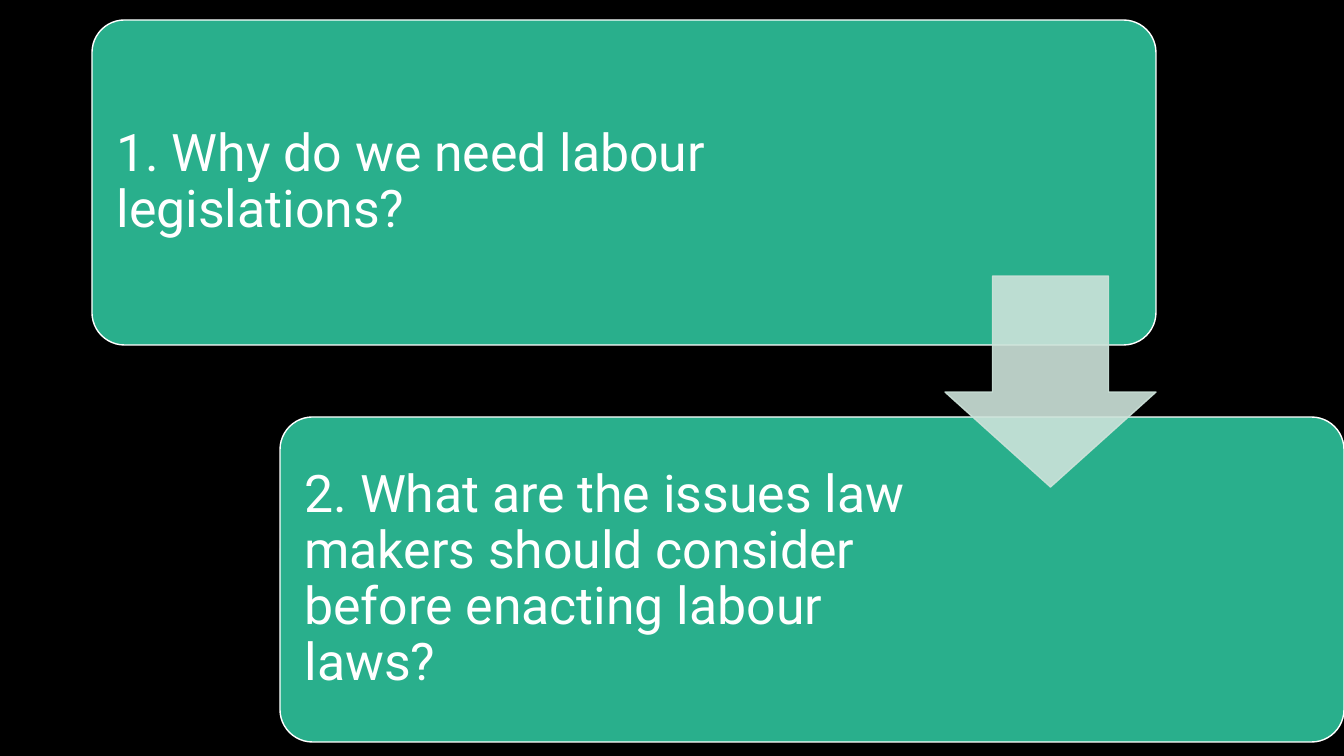
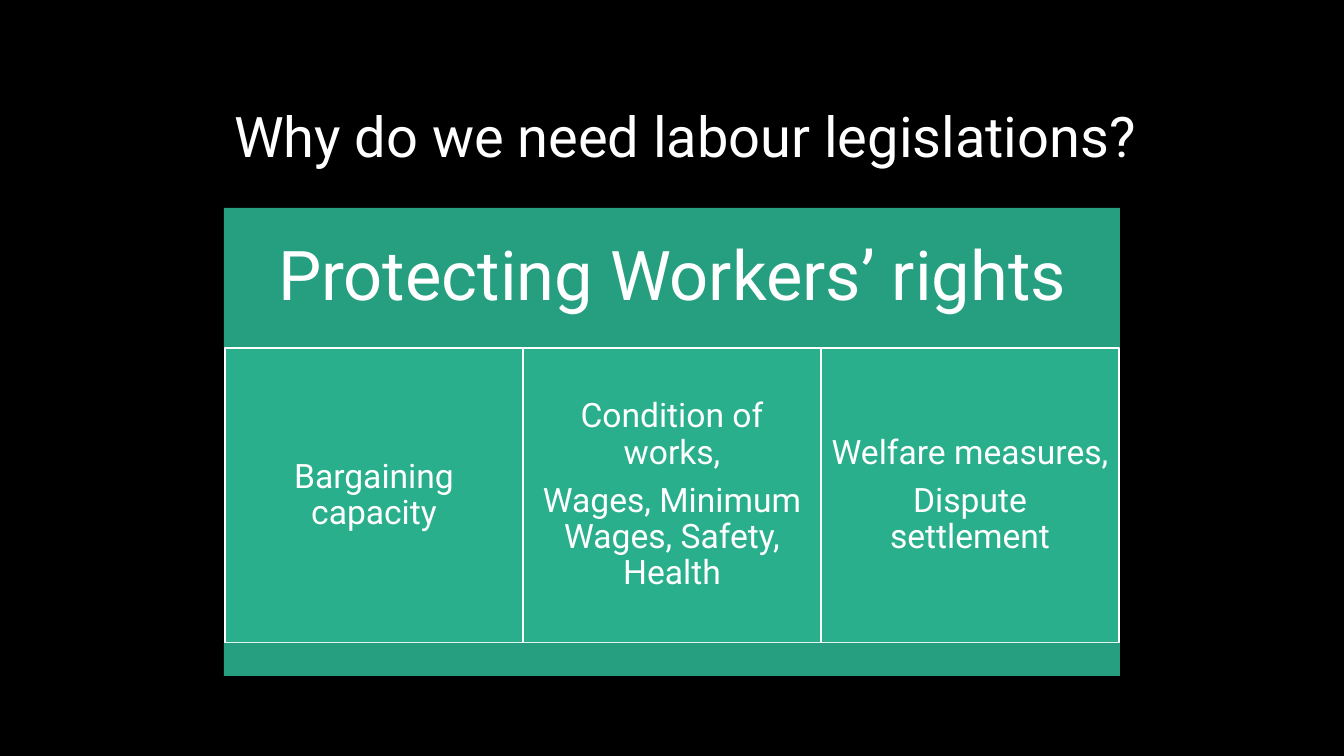
from lxml.etree import SubElement
from pptx import Presentation
from pptx.dml.color import RGBColor
from pptx.enum.shapes import MSO_SHAPE
from pptx.enum.text import MSO_ANCHOR, MSO_AUTO_SIZE, PP_ALIGN
from pptx.oxml.ns import qn
from pptx.util import Pt

PX = 914400 / 100.8
BLACK, WHITE = "000000", "FFFFFF"
GREEN, DARK_GREEN, PALE_GREEN = "29AF8C", "259F7F", "CDE3DA"


def add_block(page, kind, bounds, fill, line=None):
    shape = page.shapes.add_shape(kind, *[round(value * PX) for value in bounds])
    shape.shadow.inherit = False
    shape.fill.solid()
    shape.fill.fore_color.rgb = RGBColor.from_string(fill)
    if line:
        shape.line.color.rgb = RGBColor.from_string(line)
        shape.line.width = Pt(1)
    else:
        shape.line.fill.background()
    return shape


def write(shape, lines, size, margins, align=PP_ALIGN.CENTER):
    """Fill a shape with paragraphs; margins are left, top, right, bottom in px."""
    frame = shape.text_frame
    frame.word_wrap = True
    frame.auto_size = MSO_AUTO_SIZE.NONE
    frame.vertical_anchor = MSO_ANCHOR.MIDDLE
    (frame.margin_left, frame.margin_top,
     frame.margin_right, frame.margin_bottom) = [round(value * PX) for value in margins]
    frame.text = "\n".join(lines)
    for para in frame.paragraphs:
        para.alignment = align
        para.line_spacing = 0.9
        para.space_before = Pt(0)
        para.space_after = Pt(size * 0.35)
        para.font.name = "Roboto"
        para.font.size = Pt(size)
        para.font.color.rgb = RGBColor.from_string(WHITE)


deck = Presentation()
deck.slide_width, deck.slide_height = round(1344 * PX), round(756 * PX)
background = deck.slide_master.background.fill
background.solid()
background.fore_color.rgb = RGBColor.from_string(BLACK)
title_only, blank = deck.slide_layouts[5], deck.slide_layouts[6]

# Slide 1: two questions joined by an arrow
page = deck.slides.add_slide(blank)
questions = [
    (92, 20, 332, "1. Why do we need labour legislations?"),
    (280, 417, 414, "2. What are the issues law makers should consider "
                    "before enacting labour laws?"),
]
for left, top, right_margin, question in questions:
    card = add_block(page, MSO_SHAPE.ROUNDED_RECTANGLE, (left, top, 1064, 325), GREEN, WHITE)
    card.adjustments[0] = 0.1
    write(card, [question], 37, (15, 15, right_margin, 15), PP_ALIGN.LEFT)

arrow = add_block(page, MSO_SHAPE.DOWN_ARROW, (945, 276, 211, 211), PALE_GREEN, PALE_GREEN)
arrow.adjustments[0], arrow.adjustments[1] = 0.55, 0.45
for color in arrow.element.spPr.iter(qn("a:srgbClr")):
    SubElement(color, qn("a:alpha"), val="90000")

# Slide 2: a heading over three columns
page = deck.slides.add_slide(title_only)
title = page.shapes.title
title.left, title.top, title.width, title.height = [
    round(value * PX) for value in (93, 100, 1184, 78)]
write(title, ["Why do we need labour legislations?"], 40, (10, 0, 10, 0))
title.text_frame.paragraphs[0].space_after = Pt(0)

header = add_block(page, MSO_SHAPE.RECTANGLE, (224, 208, 896, 140), DARK_GREEN)
write(header, ["Protecting Workers’ rights"], 49, (20, 20, 20, 20))

columns = [
    ["Bargaining capacity"],
    ["Condition of works,", "Wages, Minimum Wages, Safety, Health"],
    ["Welfare measures,", "Dispute settlement"],
]
for index, lines in enumerate(columns):
    column = add_block(page, MSO_SHAPE.RECTANGLE, (225 + 298 * index, 348, 298, 295), GREEN, WHITE)
    write(column, lines, 24, (10, 10, 10, 10))

add_block(page, MSO_SHAPE.RECTANGLE, (224, 643, 896, 33), DARK_GREEN)

deck.save("out.pptx")
